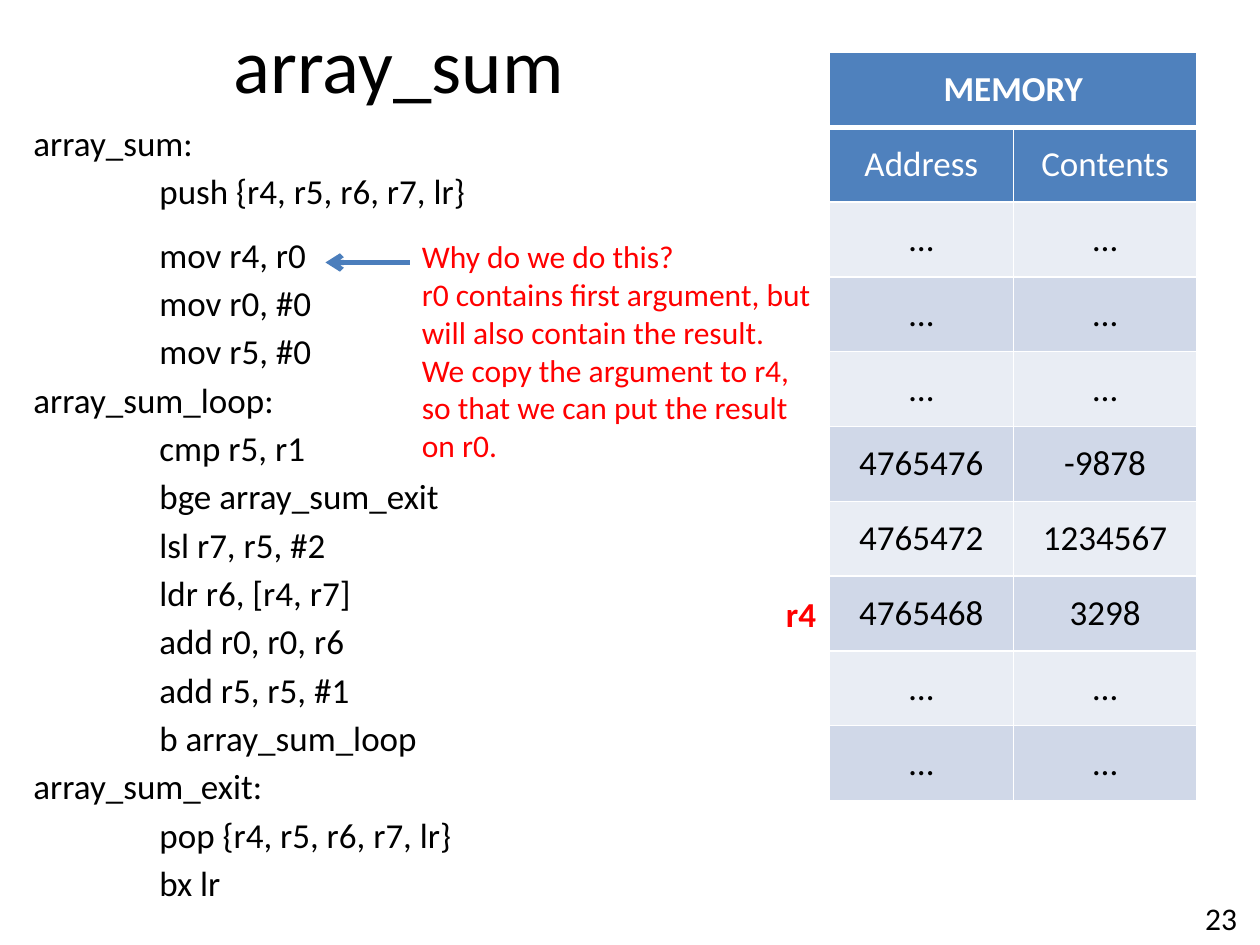
from dataclasses import dataclass

from lxml import etree
from pptx import Presentation
from pptx.dml.color import RGBColor
from pptx.enum.shapes import MSO_CONNECTOR
from pptx.enum.text import MSO_ANCHOR, MSO_AUTO_SIZE, PP_ALIGN
from pptx.oxml.ns import qn
from pptx.util import Pt

LEFT, CENTER, RIGHT = PP_ALIGN.LEFT, PP_ALIGN.CENTER, PP_ALIGN.RIGHT
MIDDLE = MSO_ANCHOR.MIDDLE
NO_FIT, GROW = MSO_AUTO_SIZE.NONE, MSO_AUTO_SIZE.SHAPE_TO_FIT_TEXT
STRAIGHT = MSO_CONNECTOR.STRAIGHT


@dataclass(frozen=True)
class Theme:
    font: str = "Calibri"
    title_size: int = 44
    body_size: int = 20
    note_size: int = 18
    ink: str = "000000"
    paper: str = "FFFFFF"
    accent: str = "FF0000"
    header: str = "4F81BD"
    bands: tuple = ("E9EDF4", "D0D8E8")
    arrow: str = "4B7EBC"


LISTING = """array_sum:
 push {r4, r5, r6, r7, lr}
 mov r4, r0
 mov r0, #0
 mov r5, #0
array_sum_loop:
 cmp r5, r1
 bge array_sum_exit
 lsl r7, r5, #2
 ldr r6, [r4, r7]
 add r0, r0, r6
 add r5, r5, #1
 b array_sum_loop
array_sum_exit:
 pop {r4, r5, r6, r7, lr}
 bx lr""".split("\n")
PROLOGUE_END = 2

EXPLANATION = [
    "Why do we do this?",
    "r0 contains first argument, but will also contain the result.",
    "We copy the argument to r4,",
    "so that we can put the result",
    "on r0.",
]

UNKNOWN = ("…", "…")
MEMORY = [
    ("MEMORY", ""),
    ("Address", "Contents"),
    *[UNKNOWN] * 3,
    ("4765476", "-9878"),
    ("4765472", "1234567"),
    ("4765468", "3298"),
    *[UNKNOWN] * 2,
]
HEADER_ROWS = 2


class SlideBuilder:
    """Draws styled elements on the current slide, with lengths in points."""

    def __init__(self, slide, theme):
        self.slide = slide
        self.theme = theme

    def apply(self, target, values):
        for name, value in values.items():
            setattr(target, name, value)

    def add_words(self, paragraph, words, size, color, bold=False, align=LEFT):
        paragraph.alignment = align
        run = paragraph.add_run()
        run.text = words
        self.apply(run.font, {"name": self.theme.font, "size": Pt(size), "bold": bold})
        run.font.color.rgb = RGBColor.from_string(color)

    def title(self, words, left, top, width, height):
        heading = self.slide.shapes.title
        self.apply(heading, {"left": Pt(left), "top": Pt(top),
                             "width": Pt(width), "height": Pt(height)})
        heading.text_frame.vertical_anchor = MIDDLE
        self.add_words(heading.text_frame.paragraphs[0], words,
                       self.theme.title_size, self.theme.ink, align=CENTER)

    def text(self, lines, box, size, color, wrap=True, fit=NO_FIT, **style):
        frame = self.slide.shapes.add_textbox(*map(Pt, box)).text_frame
        self.apply(frame, {"word_wrap": wrap, "auto_size": fit})
        for index, line in enumerate(lines):
            paragraph = frame.add_paragraph() if index else frame.paragraphs[0]
            self.add_words(paragraph, line, size, color, **style)
        return frame.paragraphs

    def code(self, listing, box, indent, gap, wide_gap, wide_at):
        instructions = [line.strip() for line in listing]
        paragraphs = self.text(instructions, box, self.theme.body_size, self.theme.ink)
        for index, (line, paragraph) in enumerate(zip(listing, paragraphs)):
            if index:
                paragraph.space_before = Pt(wide_gap if index == wide_at else gap)
            if line.startswith(" "):
                paragraph._p.get_or_add_pPr().set("marL", str(Pt(indent)))

    def border(self, cell, side, width):
        properties = cell._tc.get_or_add_tcPr()
        line = etree.Element(qn(f"a:ln{side}"), w=str(Pt(width)))
        fill = etree.SubElement(line, qn("a:solidFill"))
        etree.SubElement(fill, qn("a:srgbClr"), val=self.theme.paper)
        properties.insert("LRTB".index(side), line)

    def memory_table(self, rows, left, top, column_width, row_height):
        columns = len(rows[0])
        table = self.slide.shapes.add_table(
            len(rows), columns, Pt(left), Pt(top),
            Pt(column_width * columns), Pt(row_height * len(rows))).table
        table.cell(0, 0).merge(table.cell(0, columns - 1))
        for column in table.columns:
            column.width = Pt(column_width)
        for index, values in enumerate(rows):
            table.rows[index].height = Pt(row_height)
            is_header = index < HEADER_ROWS
            band = self.theme.bands[index % 2]
            for column, value in enumerate(values):
                cell = table.cell(index, column)
                cell.vertical_anchor = MIDDLE
                cell.fill.solid()
                cell.fill.fore_color.rgb = RGBColor.from_string(
                    self.theme.header if is_header else band)
                for side in "LRTB":
                    under_heading = (index, side) in ((0, "B"), (1, "T"))
                    self.border(cell, side, 3 if under_heading else 1)
                if value:
                    self.add_words(cell.text_frame.paragraphs[0], value, self.theme.body_size,
                                   self.theme.paper if is_header else self.theme.ink,
                                   bold=index == 0, align=CENTER)

    def arrow(self, start, end, width):
        pointer = self.slide.shapes.add_connector(STRAIGHT, *map(Pt, start + end))
        pointer.line.width = Pt(width)
        pointer.line.color.rgb = RGBColor.from_string(self.theme.arrow)
        outline = pointer._element.spPr.find(qn("a:ln"))
        etree.SubElement(outline, qn("a:tailEnd"), type="arrow")
        etree.SubElement(pointer._element.spPr, qn("a:effectLst"))


def main():
    theme = Theme()
    deck = Presentation()
    deck.slide_width, deck.slide_height = Pt(720), Pt(540)
    builder = SlideBuilder(deck.slides.add_slide(deck.slide_layouts[5]), theme)
    builder.title("array_sum", 36, 6, 384, 60)
    builder.code(LISTING, (12, 66, 444, 396), indent=72, gap=3.6,
                 wide_gap=12.2, wide_at=PROLOGUE_END)
    builder.text(["23"], (546, 510, 168, 28.8), theme.note_size, theme.ink, align=RIGHT)
    builder.memory_table(MEMORY, 474, 30, column_width=105, row_height=42.75)
    builder.text(["r4"], (442, 335, 32, 31.5), theme.body_size, theme.accent,
                 wrap=False, fit=GROW, bold=True)
    builder.text(EXPLANATION, (234, 132, 240, 138), theme.note_size, theme.accent, fit=GROW)
    builder.arrow((234, 150), (186, 150), width=3)
    deck.save("out.pptx")


if __name__ == "__main__":
    main()
